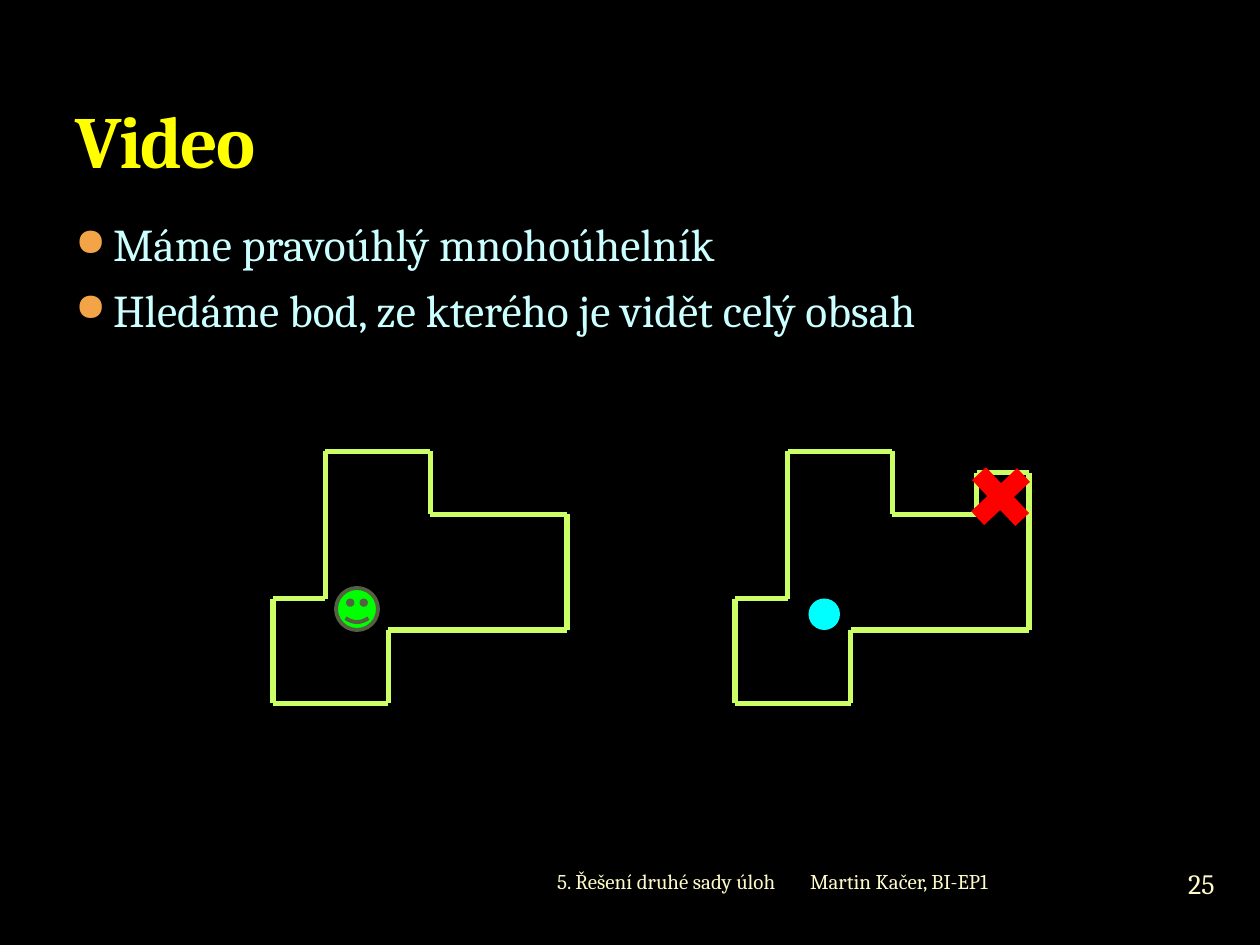
from itertools import pairwise

from lxml.etree import SubElement
from pptx import Presentation
from pptx.dml.color import RGBColor
from pptx.enum.shapes import MSO_CONNECTOR, MSO_SHAPE
from pptx.enum.text import MSO_ANCHOR, PP_ALIGN
from pptx.oxml.ns import qn
from pptx.util import Cm, Pt

FONT = "Cambria"
UNIT = 2.54 / 12  # grid step in cm
SHIFT = 44        # grid steps between the two rooms

TITLE = "Video"
POINTS = ["Máme pravoúhlý mnohoúhelník",
          "Hledáme bod, ze kterého je vidět celý obsah"]

# text, box in cm, size, alignment, inset in cm
FOOTER = [
    ("Martin Kačer, BI-EP1", (16.08, 17.22, 7.19, 1.07), 12, PP_ALIGN.LEFT, 0.25),
    ("5. Řešení druhé sady úloh", (5.92, 17.22, 9.96, 1.07), 12, PP_ALIGN.RIGHT, 0.25),
    ("25", (23.37, 17.17, 1.7, 1.27), 16, PP_ALIGN.CENTER, 0),
]

# corners in grid steps, clockwise
START = [(31, 43), (41, 43), (41, 49)]
NICHE = [(49, 49), (49, 45), (54, 45)]
CORNER = [(54, 49)]
END = [(54, 60), (37, 60), (37, 67), (26, 67), (26, 57), (31, 57)]
ROOMS = [(START + CORNER + END, 0), (START + NICHE + END, SHIFT)]

# kind, left, top, size in grid steps, fill
MARKS = {
    "cross": (MSO_SHAPE.CROSS, 92.3, 44.3, 6, "FF0000"),
    "dot": (MSO_SHAPE.OVAL, 77, 57, 3, "00FFFF"),
    "smile": (MSO_SHAPE.SMILEY_FACE, 32, 56, 4, "00FF00"),
}


def color(text):
    return RGBColor.from_string(text)


def grid(step):
    return Cm(step * UNIT)


def write(slide, lines, box, size, tint, anchor, align=PP_ALIGN.LEFT, inset=0.25):
    """Add a text box with one paragraph per line and return its paragraphs."""
    frame = slide.shapes.add_textbox(*map(Cm, box)).text_frame
    frame.word_wrap = True
    frame.vertical_anchor = anchor
    frame.margin_left = frame.margin_right = Cm(inset)
    frame.margin_top = frame.margin_bottom = Cm(inset / 2)
    frame.text = "\n".join(lines)
    for para in frame.paragraphs:
        para.alignment = align
        font = para.runs[0].font
        font.name, font.size = FONT, Pt(size)
        font.color.rgb = color(tint)
    return frame.paragraphs


def bullet(para):
    para.space_before = Pt(6)
    props = para._p.get_or_add_pPr()
    props.set("marL", str(Cm(0.76)))
    props.set("indent", str(-Cm(0.76)))
    tint = SubElement(props, qn("a:buClr"))
    SubElement(tint, qn("a:srgbClr"), val="F3A447")
    SubElement(props, qn("a:buSzPct"), val="85000")
    SubElement(props, qn("a:buChar"), char="●")


def wall(slide, start, end, shift):
    line = slide.shapes.add_connector(
        MSO_CONNECTOR.STRAIGHT, grid(start[0] + shift), grid(start[1]),
        grid(end[0] + shift), grid(end[1]))
    line.line.color.rgb = color("CCFF66")
    line.line.width = Pt(3)
    SubElement(line._element.spPr, qn("a:effectLst"))


def mark(slide, kind, left, top, size, fill):
    shape = slide.shapes.add_shape(kind, *map(grid, (left, top, size, size)))
    shape.shadow.inherit = False
    shape.fill.solid()
    shape.fill.fore_color.rgb = color(fill)
    shape.line.fill.background()
    return shape


def main():
    deck = Presentation()
    deck.slide_width, deck.slide_height = Cm(25.4), Cm(19.05)
    slide = deck.slides.add_slide(deck.slide_layouts[6])
    slide.background.fill.solid()
    slide.background.fill.fore_color.rgb = color("000000")

    for para in write(slide, POINTS, (1.27, 4.24, 22.86, 4.88), 26, "CCFFFF",
                      MSO_ANCHOR.TOP):
        bullet(para)
    head = write(slide, [TITLE], (1.27, 0.43, 22.86, 3.38), 42, "FFFF00",
                 MSO_ANCHOR.BOTTOM)[0].runs[0].font
    head.bold = True
    head._element.set("spc", "-100")

    for room, shift in ROOMS:
        for start, end in pairwise(room + room[:1]):
            wall(slide, start, end, shift)

    shapes = {name: mark(slide, *data) for name, data in MARKS.items()}
    shapes["cross"].rotation = 46.7
    shapes["cross"].adjustments[0] = 0.35
    smile = shapes["smile"].line
    smile.color.rgb = color("536142")
    smile.width = Pt(2.25)

    for text, box, size, align, inset in FOOTER:
        write(slide, [text], box, size, "FEFAC9", MSO_ANCHOR.MIDDLE, align, inset)

    deck.save("out.pptx")


if __name__ == "__main__":
    main()
